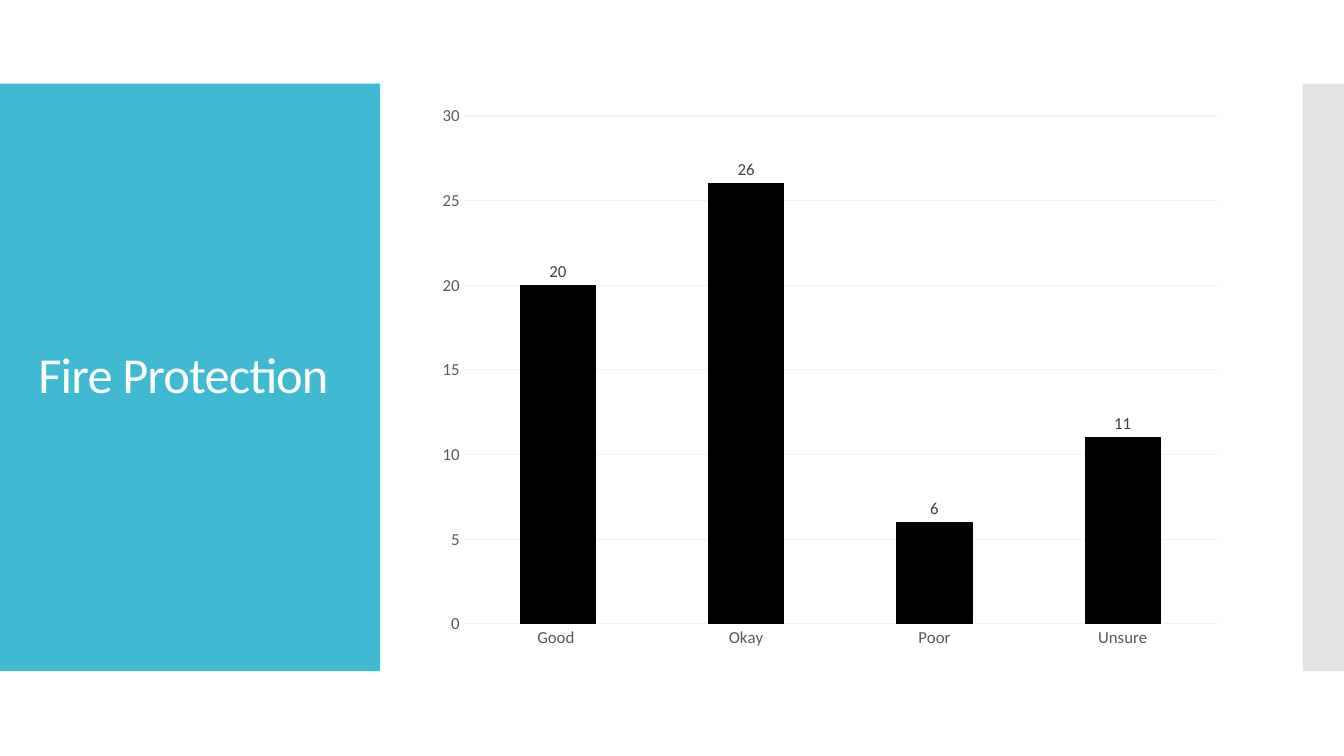
from pptx import Presentation
from pptx.chart.data import CategoryChartData
from pptx.dml.color import RGBColor
from pptx.enum.chart import XL_CHART_TYPE, XL_LABEL_POSITION, XL_TICK_MARK
from pptx.enum.shapes import MSO_SHAPE
from pptx.enum.text import MSO_ANCHOR, PP_ALIGN
from pptx.oxml.ns import qn
from pptx.util import Inches, Pt
from lxml import etree

COLUMN = XL_CHART_TYPE.COLUMN_CLUSTERED
OUTSIDE = XL_LABEL_POSITION.OUTSIDE_END
NO_TICK = XL_TICK_MARK.NONE
RECT = MSO_SHAPE.RECTANGLE
MIDDLE = MSO_ANCHOR.MIDDLE
LEFT = PP_ALIGN.LEFT

FONT = "Calibri"
WIDTH, HEIGHT = 13.33, 7.5
TITLE = "Fire Protection"
VOTES = {"Good ": 20, "Okay": 26, "Poor": 6, "Unsure": 11}
TOP, TALL = 0.83, 5.83
PANELS = [(0, 3.77, "40BAD2", 100), (12.92, 0.42, "C8C8C8", 50)]
TITLE_BOX = (0.28, 1.23, 3.22, 5.03)
CHART_BOX = (4.23, 0.94, 8, 5.6)


def color(text):
    return RGBColor.from_string(text)


def inches(box):
    return [Inches(n) for n in box]


def style(font, size, shade):
    font.name = FONT
    font.size = Pt(size)
    font.bold = False
    font.color.rgb = color(shade)


def write(shape, text, size=18, shade="000000", spacing=1.0, track=0):
    frame = shape.text_frame
    frame.word_wrap = True
    frame.vertical_anchor = MIDDLE
    para = frame.paragraphs[0]
    para.alignment = LEFT
    para.line_spacing = spacing
    run = para.add_run()
    run.text = text
    style(run.font, size, shade)
    run.font._element.set("spc", str(round(track * 100)))


def add_panel(slide, left, wide, shade, alpha):
    panel = slide.shapes.add_shape(RECT, *inches((left, TOP, wide, TALL)))
    panel.shadow.inherit = False
    panel.line.fill.background()
    panel.fill.solid()
    panel.fill.fore_color.rgb = color(shade)
    if alpha < 100:
        tint = panel.element.spPr.find(".//" + qn("a:srgbClr"))
        etree.SubElement(tint, qn("a:alpha"), val=str(alpha * 1000))


def add_title(slide):
    title = slide.shapes.title
    title.left, title.top, title.width, title.height = inches(TITLE_BOX)
    write(title, TITLE, size=36, shade="FFFFFF", spacing=0.9, track=-0.6)
    title.element.getparent().append(title.element)


def add_votes(slide):
    data = CategoryChartData()
    data.categories = list(VOTES)
    data.add_series("Series 1", list(VOTES.values()))
    chart = slide.shapes.add_chart(COLUMN, *inches(CHART_BOX), data).chart
    style(chart.font, 10, "000000")
    chart.has_legend = False
    chart.has_title = False
    for axis in (chart.category_axis, chart.value_axis):
        axis.major_tick_mark = axis.minor_tick_mark = NO_TICK
        axis.format.line.fill.background()
        style(axis.tick_labels.font, 12, "595959")

    scale = chart.value_axis
    scale.minimum_scale, scale.maximum_scale, scale.major_unit = 0, 30, 5
    grid = scale.major_gridlines.format.line
    grid.color.rgb = color("F2F2F2")
    grid.width = Pt(0.75)

    plot = chart.plots[0]
    plot.gap_width = 150
    plot.vary_by_categories = False
    bars = plot.series[0]
    bars.format.fill.solid()
    bars.format.fill.fore_color.rgb = color("000000")
    bars.format.line.color.rgb = color("000000")
    bars.format.line.width = Pt(0.75)
    labels = bars.data_labels
    labels.show_value = True
    labels.position = OUTSIDE
    style(labels.font, 12, "404040")


def main():
    deck = Presentation()
    deck.slide_width, deck.slide_height = inches((WIDTH, HEIGHT))
    slide = deck.slides.add_slide(deck.slide_layouts[5])
    for panel in PANELS:
        add_panel(slide, *panel)
    add_title(slide)
    add_votes(slide)
    deck.save("out.pptx")


if __name__ == "__main__":
    main()
